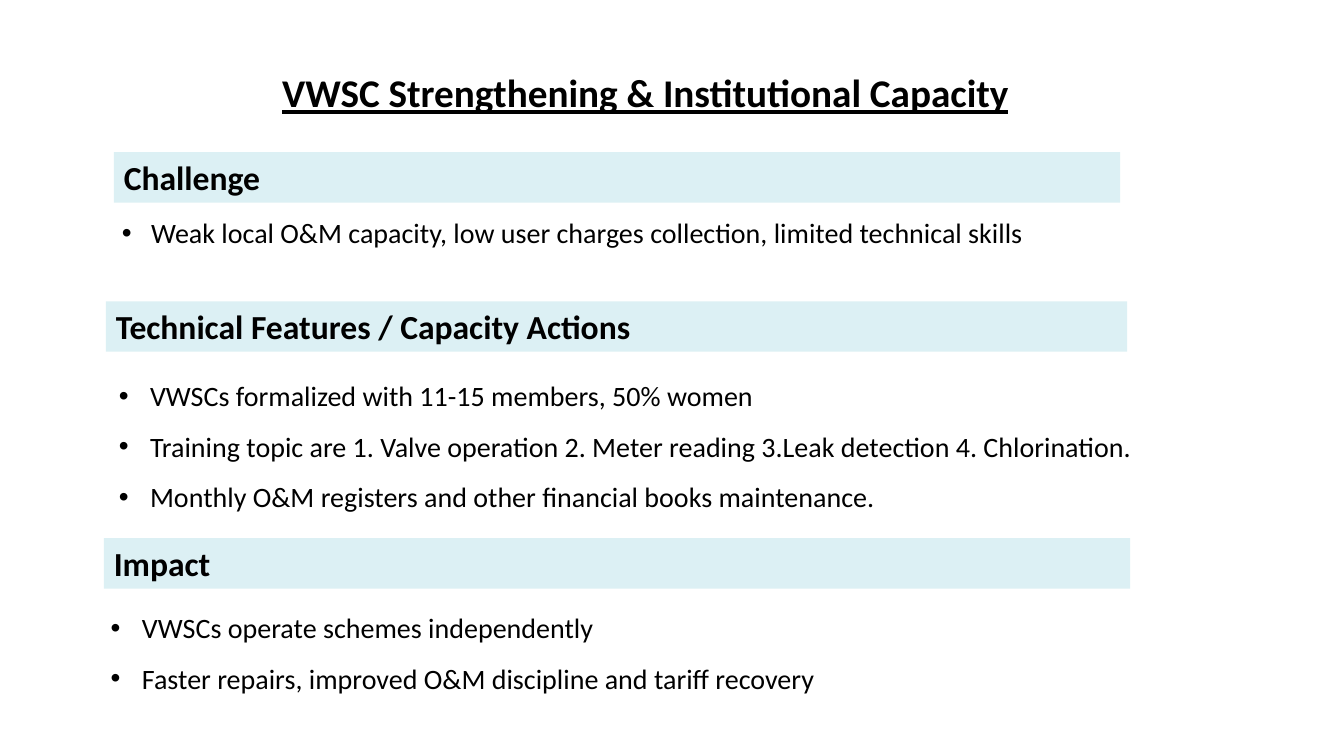
from dataclasses import dataclass

from lxml import etree
from pptx import Presentation
from pptx.dml.color import RGBColor
from pptx.enum.shapes import MSO_SHAPE
from pptx.enum.text import MSO_ANCHOR, MSO_AUTO_SIZE, PP_ALIGN
from pptx.oxml.ns import qn
from pptx.slide import Slide
from pptx.text.text import TextFrame
from pptx.util import Emu, Pt

RECTANGLE = MSO_SHAPE.RECTANGLE
TOP = MSO_ANCHOR.TOP
GROW = MSO_AUTO_SIZE.SHAPE_TO_FIT_TEXT
LEFT, CENTER = PP_ALIGN.LEFT, PP_ALIGN.CENTER
TITLE_ONLY = 5
EMU_PER_PX = 9144


@dataclass(frozen=True)
class Theme:
    font: str = "Calibri"
    bullet_font: str = "Arial"
    ink: RGBColor = RGBColor(0x00, 0x00, 0x00)
    band: RGBColor = RGBColor(0xDC, 0xF0, 0xF4)
    title_size: int = 28
    heading_size: int = 24
    body_size: int = 20
    gap: int = 6


@dataclass(frozen=True)
class Box:
    left: int
    top: int
    width: int
    height: int


@dataclass(frozen=True)
class Section:
    heading: str
    band: Box
    points: tuple[str, ...]
    body: Box
    indent: int = 31


THEME = Theme()
TITLE = "VWSC Strengthening & Institutional Capacity"
TITLE_BOX = Box(195, 63, 890, 57)
SECTIONS = (
    Section(
        "Challenge",
        Box(113, 151, 998, 50),
        ("Weak local O&M capacity, low user charges collection, limited technical skills",),
        Box(111, 209, 1014, 44),
        indent=29,
    ),
    Section(
        "Technical Features / Capacity Actions",
        Box(105, 299, 1013, 50),
        (
            "VWSCs formalized with 11-15 members, 50% women",
            "Training topic are 1. Valve operation 2. Meter reading 3.Leak detection 4. Chlorination.",
            "Monthly O&M registers and other financial books maintenance.",
        ),
        Box(108, 371, 1117, 145),
    ),
    Section(
        "Impact",
        Box(103, 534, 1018, 50),
        (
            "VWSCs operate schemes independently",
            "Faster repairs, improved O&M discipline and tariff recovery",
        ),
        Box(100, 601, 1097, 94),
    ),
)


def px(length: int) -> Emu:
    return Emu(length * EMU_PER_PX)


def place(box: Box) -> tuple[Emu, Emu, Emu, Emu]:
    return px(box.left), px(box.top), px(box.width), px(box.height)


def write_text(
    frame: TextFrame,
    *lines: str,
    size: int,
    bold: bool = False,
    underline: bool = False,
    align: PP_ALIGN = LEFT,
    indent: int = 0,
    gap: int = 0,
) -> None:
    frame.word_wrap = True
    frame.auto_size = GROW
    frame.vertical_anchor = TOP
    for index, line in enumerate(lines):
        paragraph = frame.add_paragraph() if index else frame.paragraphs[0]
        paragraph.alignment = align
        paragraph.space_before = Pt(gap if index else 0)
        paragraph.space_after = Pt(gap)
        if indent:
            properties = paragraph._p.get_or_add_pPr()
            properties.set("marL", str(px(indent)))
            properties.set("indent", str(px(-indent)))
            etree.SubElement(properties, qn("a:buFont"), typeface=THEME.bullet_font)
            etree.SubElement(properties, qn("a:buChar"), char="•")
        run = paragraph.add_run()
        run.text = line
        run.font.name = THEME.font
        run.font.size = Pt(size)
        run.font.bold = bold
        run.font.underline = underline
        run.font.color.rgb = THEME.ink


def draw_title(slide: Slide) -> None:
    title = slide.shapes.title
    title.left, title.top, title.width, title.height = place(TITLE_BOX)
    write_text(title.text_frame, TITLE, size=THEME.title_size,
               bold=True, underline=True, align=CENTER)


def draw_section(slide: Slide, section: Section) -> None:
    band = slide.shapes.add_shape(RECTANGLE, *place(section.band))
    band.shadow.inherit = False
    band.fill.solid()
    band.fill.fore_color.rgb = THEME.band
    band.line.fill.background()
    write_text(band.text_frame, section.heading, size=THEME.heading_size, bold=True)

    body = slide.shapes.add_textbox(*place(section.body))
    write_text(body.text_frame, *section.points, size=THEME.body_size,
               indent=section.indent, gap=THEME.gap)


def main() -> None:
    deck = Presentation()
    deck.slide_width, deck.slide_height = px(1333), px(750)
    slide = deck.slides.add_slide(deck.slide_layouts[TITLE_ONLY])
    draw_title(slide)
    for section in SECTIONS:
        draw_section(slide, section)
    deck.save("out.pptx")


if __name__ == "__main__":
    main()
